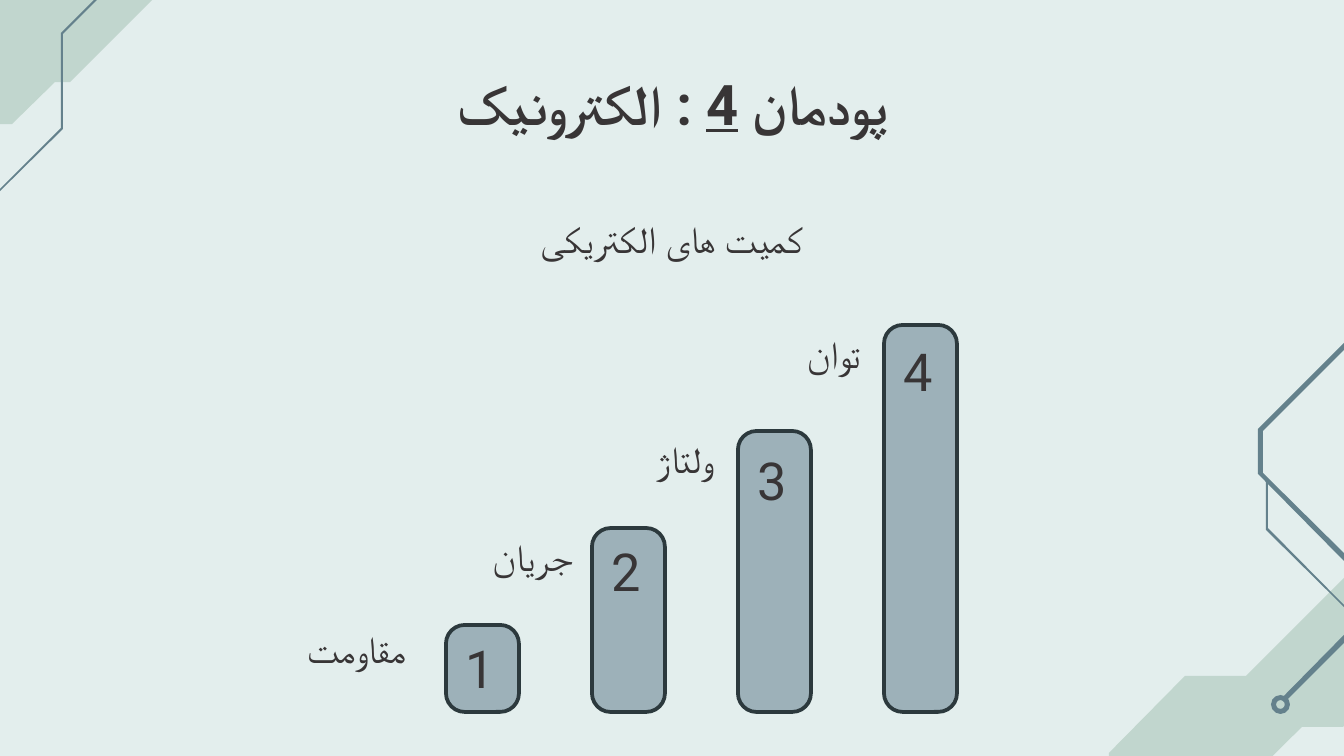
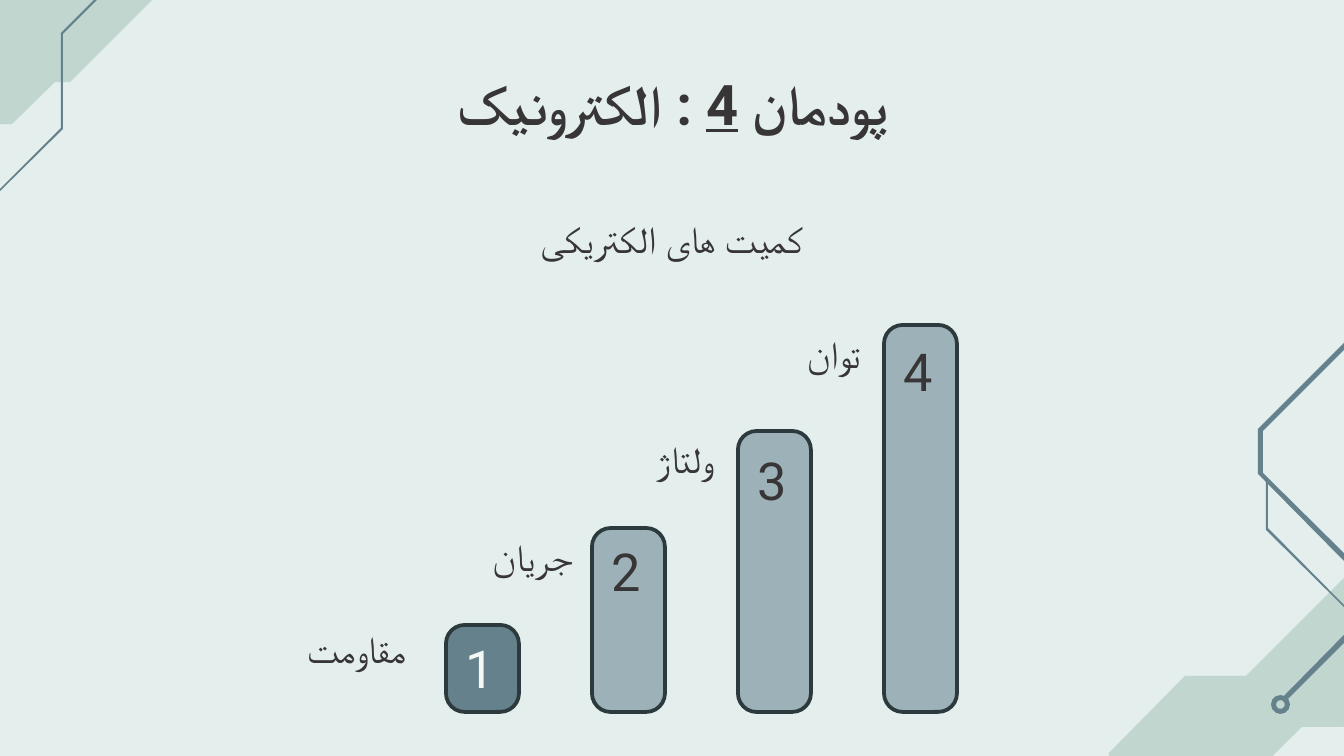
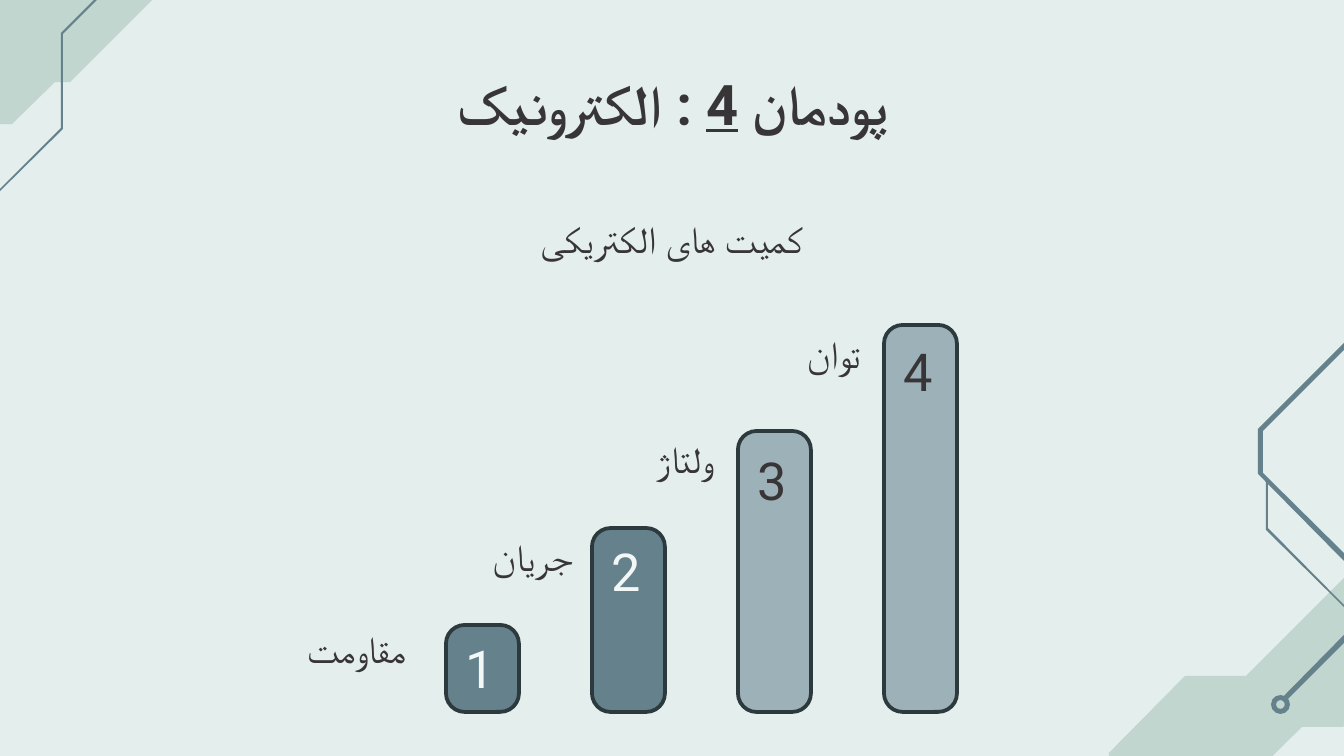
from typing import NamedTuple

from lxml import etree
from pptx import Presentation
from pptx import util as u
from pptx.dml.color import RGBColor
from pptx.enum import shapes, text
from pptx.oxml.ns import qn

PX = 9144000 / 1344
FONT = "Roboto"
COLORS = {
    "background": "E3EEED",
    "leaf": "C1D6CE",
    "circuit": "64818C",
    "bar": "9DB1B9",
    "active_bar": "64818C",
    "outline": "2C393D",
    "ink": "383536",
    "active_ink": "F3F7F5",
}

TOP_LEAF = [(286, 0), (213, 73), (148, 73), (0, 221), (138, 221), (181, 179),
            (196, 179), (375, 0)]
TOP_TRACE = [(289, 28), (187, 130), (187, 225), (110, 302), (111, 303),
             (189, 226), (189, 131), (290, 30)]
BOTTOM_LEAF = [(320, 387), (186, 521), (125, 521), (49, 598), (49, 633), (0, 681),
               (132, 681), (242, 572), (283, 572), (362, 493), (362, 471), (447, 387)]
BOTTOM_TRACE = [(577, 0), (447, 130), (342, 130), (198, 274), (198, 319), (285, 407),
                (285, 479), (221, 544), (225, 547), (291, 481), (291, 405), (203, 318),
                (203, 276), (344, 135), (448, 135), (581, 4)]
THIN_TRACE = [(206, 325), (206, 375), (287, 455), (288, 454), (208, 373), (208, 325)]


class Quantity(NamedTuple):
    """One step of the staircase; label and number offsets are from the bar's corner."""
    name: str
    height: int
    number_dy: int
    label_dx: int
    label_dy: int


QUANTITIES = [
    Quantity("مقاومت", 87, 5, -251, -5),
    Quantity("جریان", 184, 5, -221, 0),
    Quantity("ولتاژ", 281, 11, -214, -1),
    Quantity("توان", 387, 8, -212, 0),
]
BAR_WIDTH, BAR_PITCH = 73, 146


def px(*lengths):
    """Turn pixel lengths into EMU."""
    return [u.Emu(round(length * PX)) for length in lengths]


def color(name):
    """Look up a palette colour."""
    return RGBColor.from_string(COLORS[name])


def paint(shape, fill, outline=None):
    """Give a shape a flat fill, an optional outline and no shadow."""
    shape.shadow.inherit = False
    shape.fill.solid()
    shape.fill.fore_color.rgb = color(fill)
    if outline:
        shape.line.color.rgb = color(outline)
        shape.line.width = u.Pt(2)
    else:
        shape.line.fill.background()
    return shape


def format_run(run, size, ink="ink"):
    """Set the font, size and colour of a run for Latin and complex scripts."""
    run.font.name = FONT
    run.font.size = u.Pt(size)
    run.font.color.rgb = color(ink)
    etree.SubElement(run.font._element, qn("a:cs"), typeface=FONT)


def add_caption(slide, box, words, size, ink="ink", align=None):
    """Add a one-line text box."""
    frame = slide.shapes.add_textbox(*px(*box)).text_frame
    frame.word_wrap = True
    frame.auto_size = text.MSO_AUTO_SIZE.SHAPE_TO_FIT_TEXT
    frame.text = words
    frame.paragraphs[0].alignment = align
    format_run(frame.paragraphs[0].runs[0], size, ink)


def add_outline(slide, corner, points, fill):
    """Add a closed polygon whose points are relative to a corner."""
    left, top = corner
    placed = [(left + x, top + y) for x, y in points]
    builder = slide.shapes.build_freeform(*placed[0], scale=PX)
    builder.add_line_segments(placed[1:], close=True)
    return paint(builder.convert_to_shape(), fill)


def add_top_ornament(slide, corner):
    """Draw the upper left leaf and trace."""
    return [add_outline(slide, corner, TOP_LEAF, "leaf"),
            add_outline(slide, corner, TOP_TRACE, "circuit")]


def add_bottom_ornament(slide, corner):
    """Draw the lower right leaf, traces and ring."""
    left, top = corner
    ring = slide.shapes.add_shape(shapes.MSO_SHAPE.DONUT,
                                  *px(left + 211, top + 540, 19, 19))
    ring.adjustments[0] = 0.27
    return [add_outline(slide, corner, BOTTOM_LEAF, "leaf"),
            add_outline(slide, corner, BOTTOM_TRACE, "circuit"),
            add_outline(slide, corner, THIN_TRACE, "circuit"),
            paint(ring, "circuit")]


def decorate_layout(layout, slide):
    """Give the layout its background and the corner ornaments."""
    layout.background.fill.solid()
    layout.background.fill.fore_color.rgb = color("background")
    for placeholder in list(layout.placeholders):
        if placeholder.placeholder_format.type != shapes.PP_PLACEHOLDER.TITLE:
            layout.shapes.element.remove(placeholder.element)
    ornaments = add_top_ornament(slide, (-126, -97)) + add_bottom_ornament(slide, (1060, 155))
    for ornament in ornaments:
        layout.shapes.element.append(ornament.element)


def add_heading(slide, box):
    """Fill the title placeholder, underlining the module number."""
    title = slide.shapes.title
    title.left, title.top, title.width, title.height = px(*box)
    frame = title.text_frame
    frame.auto_size = text.MSO_AUTO_SIZE.NONE
    frame.vertical_anchor = text.MSO_ANCHOR.TOP
    frame.margin_left = frame.margin_right = u.Inches(0.1)
    frame.margin_top = frame.margin_bottom = u.Inches(0.1)
    heading = frame.paragraphs[0]
    heading.alignment = text.PP_ALIGN.CENTER
    for words in ("پودمان ", "4", " : الکترونیک"):
        run = heading.add_run()
        run.text = words
        format_run(run, 30)
        run.font.bold = True
        run.font.underline = words == "4"


def add_staircase(slide, box, active_count):
    """Draw the numbered bars on the box's floor, with the first ones highlighted."""
    left, top, _, height = box
    for index, quantity in enumerate(QUANTITIES):
        active = index < active_count
        bar_left = left + index * BAR_PITCH
        bar_top = top + height - quantity.height
        bar = slide.shapes.add_shape(shapes.MSO_SHAPE.ROUNDED_RECTANGLE,
                                     *px(bar_left, bar_top, BAR_WIDTH, quantity.height))
        bar.adjustments[0] = 0.256
        paint(bar, "active_bar" if active else "bar", "outline")
        add_caption(slide, (bar_left + 6, bar_top + quantity.number_dy, 60, 77),
                    str(index + 1), 28, "active_ink" if active else "ink")
        add_caption(slide, (bar_left + quantity.label_dx, bar_top + quantity.label_dy, 323, 59),
                    quantity.name, 20, align=text.PP_ALIGN.CENTER)


def add_quantities_slide(prs, layout, active_count):
    """Add one slide of the staircase sequence."""
    slide = prs.slides.add_slide(layout)
    if active_count == 0:
        decorate_layout(layout, slide)
    add_heading(slide, (106, 56, 1133, 87))
    add_caption(slide, (415, 210, 513, 59), "کمیت های الکتریکی", 20,
                align=text.PP_ALIGN.CENTER)
    add_staircase(slide, (446, 325, 511, 387), active_count)


def main():
    """Build the deck."""
    prs = Presentation()
    prs.slide_width, prs.slide_height = px(1344, 756)
    layout = prs.slide_layouts[5]
    for active_count in range(3):
        add_quantities_slide(prs, layout, active_count)
    prs.save("out.pptx")


if __name__ == "__main__":
    main()
